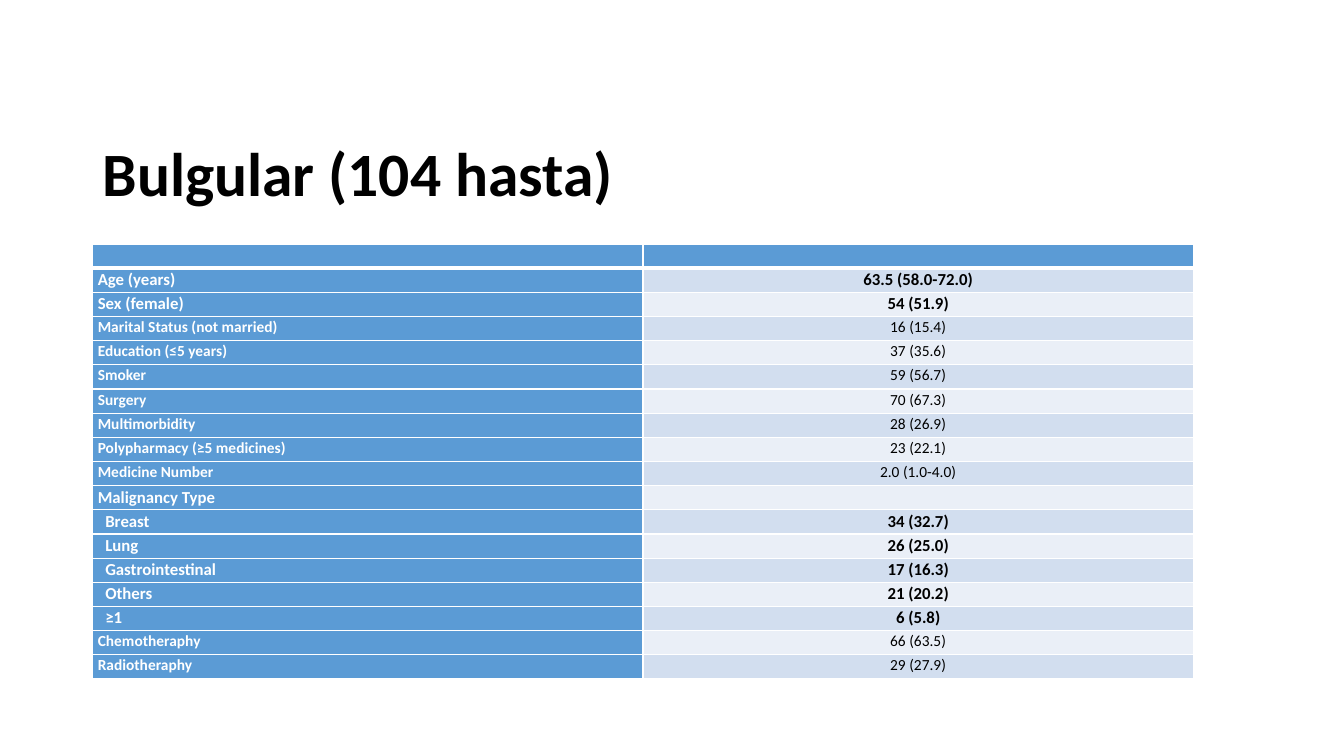
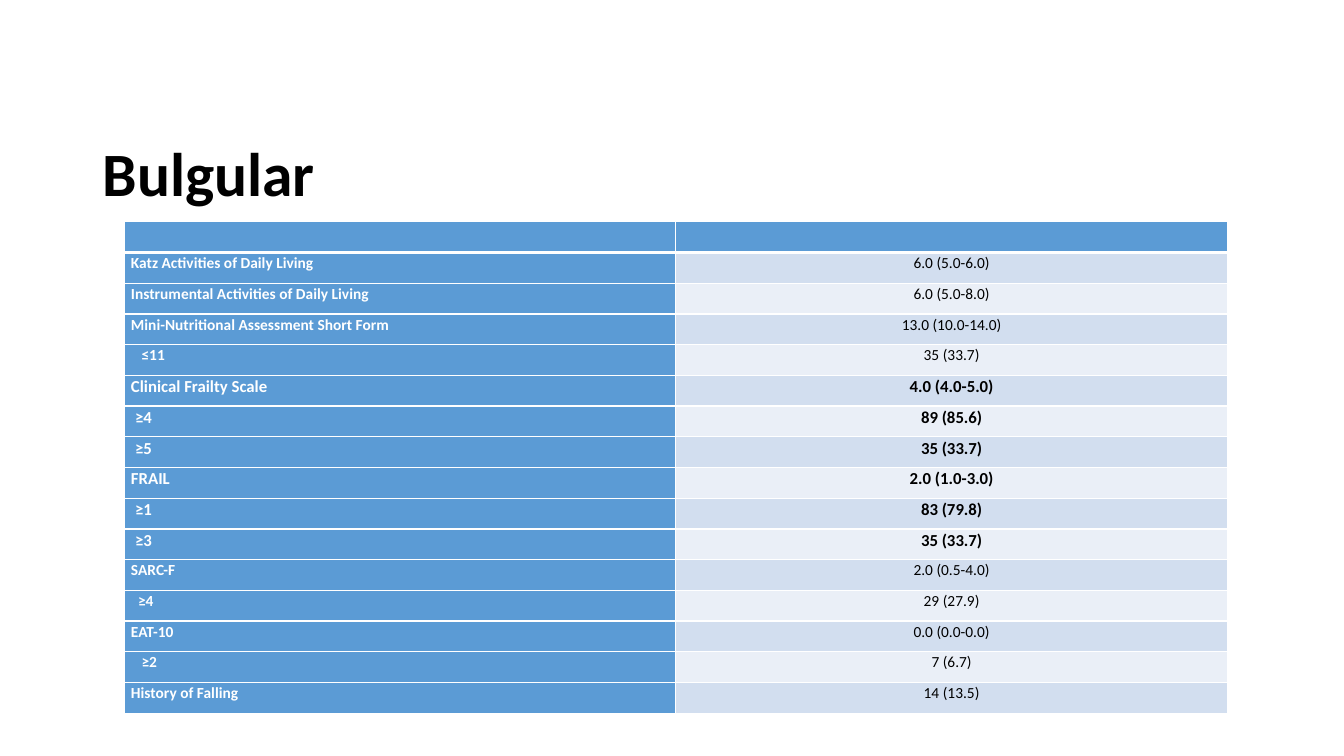
from dataclasses import dataclass

from lxml import etree
from pptx import Presentation
from pptx.dml.color import RGBColor
from pptx.enum.text import MSO_ANCHOR, PP_ALIGN
from pptx.oxml.ns import qn
from pptx.util import Pt

PX = 4572  # EMU per px, 200 px to the inch
LEFT, CENTER = PP_ALIGN.LEFT, PP_ALIGN.CENTER
MIDDLE = MSO_ANCHOR.MIDDLE


@dataclass(frozen=True)
class Theme:
    font: str = "Calibri"
    ink: str = "000000"
    paper: str = "FFFFFF"
    accent: str = "5B9BD5"
    bands: tuple = ("D2DEEF", "EAEFF7")
    title_size: int = 44
    key_size: int = 12
    plain_size: int = 11
    rule: int = 1
    header_rule: int = 3


THEME = Theme()

# Each row: label, value, indent in px, whether it is a key finding
FINDINGS = [
    {
        "title": "Bulgular (104 hasta)",
        "left": 184, "top": 484, "column": 1092, "row": 48, "inset": 10,
        "rows": [
            ("Age (years)", "63.5 (58.0-72.0)", 0, True),
            ("Sex (female)", "54 (51.9)", 0, True),
            ("Marital Status (not married)", "16 (15.4)", 0, False),
            ("Education (≤5 years)", "37 (35.6)", 0, False),
            ("Smoker", "59 (56.7)", 0, False),
            ("Surgery", "70 (67.3)", 0, False),
            ("Multimorbidity", "28 (26.9)", 0, False),
            ("Polypharmacy (≥5 medicines)", "23 (22.1)", 0, False),
            ("Medicine Number", "2.0 (1.0-4.0)", 0, False),
            ("Malignancy Type", "", 0, True),
            ("Breast", "34 (32.7)", 15, True),
            ("Lung", "26 (25.0)", 15, True),
            ("Gastrointestinal", "17 (16.3)", 15, True),
            ("Others", "21 (20.2)", 15, True),
            ("≥1", "6 (5.8)", 15, True),
            ("Chemotheraphy", "66 (63.5)", 0, False),
            ("Radiotheraphy", "29 (27.9)", 0, False),
        ],
    },
    {
        "title": "Bulgular",
        "left": 246, "top": 440, "column": 1095, "row": 61, "inset": 14,
        "rows": [
            ("Katz Activities of Daily Living", "6.0 (5.0-6.0)", 0, False),
            ("Instrumental Activities of Daily Living", "6.0 (5.0-8.0)", 0, False),
            ("Mini-Nutritional Assessment Short Form", "13.0 (10.0-14.0)", 0, False),
            ("≤11", "35 (33.7)", 21, False),
            ("Clinical Frailty Scale", "4.0 (4.0-5.0)", 0, True),
            ("≥4", "89 (85.6)", 8, True),
            ("≥5", "35 (33.7)", 8, True),
            ("FRAIL", "2.0 (1.0-3.0)", 0, True),
            ("≥1", "83 (79.8)", 8, True),
            ("≥3", "35 (33.7)", 8, True),
            ("SARC-F", "2.0 (0.5-4.0)", 0, False),
            ("≥4", "29 (27.9)", 14, False),
            ("EAT-10", "0.0 (0.0-0.0)", 0, False),
            ("≥2", "7 (6.7)", 21, False),
            ("History of Falling", "14 (13.5)", 0, False),
        ],
    },
]


def style_paragraph(paragraph, size, color, bold, spacing, align=LEFT):
    paragraph.alignment = align
    paragraph.line_spacing = spacing
    font = paragraph.font
    font.name, font.size, font.bold = THEME.font, Pt(size), bold
    font.color.rgb = RGBColor.from_string(color)


def frame_cell(cell, top, bottom):
    """Draw the four cell borders; call before the fill, which must follow them."""
    properties = cell._tc.get_or_add_tcPr()
    widths = {"a:lnL": THEME.rule, "a:lnR": THEME.rule, "a:lnT": top, "a:lnB": bottom}
    for side, width in widths.items():
        line = etree.SubElement(properties, qn(side), w=str(Pt(width)))
        fill = etree.SubElement(line, qn("a:solidFill"))
        etree.SubElement(fill, qn("a:srgbClr"), val=THEME.paper)


prs = Presentation()
prs.slide_width, prs.slide_height = 2667 * PX, 1500 * PX
blank = prs.slide_layouts[6]

for finding in FINDINGS:
    slide = prs.slides.add_slide(blank)

    heading = slide.shapes.add_textbox(184 * PX, 260 * PX, 2300 * PX, 180 * PX).text_frame
    heading.word_wrap = True
    heading.vertical_anchor = MIDDLE
    heading.text = finding["title"]
    style_paragraph(heading.paragraphs[0], THEME.title_size, THEME.ink, True, 0.9)

    rows = [("", "", 0, False)] + finding["rows"]
    table = slide.shapes.add_table(
        len(rows), 2, finding["left"] * PX, finding["top"] * PX,
        2 * finding["column"] * PX, len(rows) * finding["row"] * PX).table
    table.first_col = True

    for r, (label, value, indent, is_key) in enumerate(rows):
        size = THEME.key_size if is_key else THEME.plain_size
        band = THEME.accent if r == 0 else THEME.bands[(r - 1) % 2]
        top = THEME.header_rule if r == 1 else THEME.rule
        bottom = THEME.header_rule if r == 0 else THEME.rule
        columns = [
            (label, THEME.accent, THEME.paper, True, LEFT, indent),
            (value, band, THEME.ink, is_key, CENTER, 0),
        ]
        for c, (text, fill, color, bold, align, offset) in enumerate(columns):
            cell = table.cell(r, c)
            cell.margin_left = (finding["inset"] + offset) * PX
            cell.margin_right = finding["inset"] * PX
            cell.margin_top = cell.margin_bottom = 0
            frame_cell(cell, top, bottom)
            cell.fill.solid()
            cell.fill.fore_color.rgb = RGBColor.from_string(fill)
            cell.text = text
            paragraph = cell.text_frame.paragraphs[0]
            style_paragraph(paragraph, size, color, bold, 1.07, align)
            if not text:  # keeps an empty cell from growing past its row
                etree.SubElement(paragraph._p, qn("a:endParaRPr"), sz=str(size * 100))

prs.save("out.pptx")
